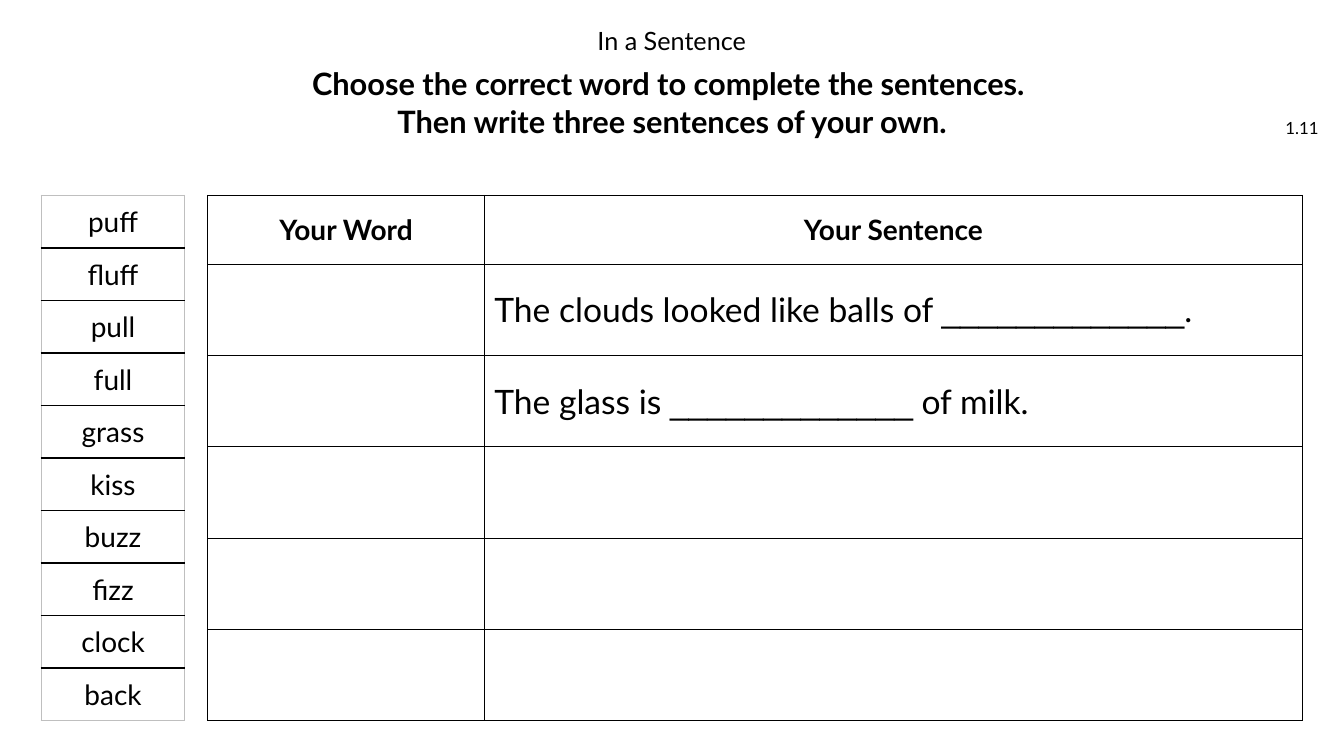
"""Build the "In a Sentence" word-choice worksheet slide."""
from lxml.etree import SubElement
from pptx import Presentation
from pptx.dml.color import RGBColor
from pptx.enum.text import MSO_ANCHOR, MSO_AUTO_SIZE, PP_ALIGN
from pptx.oxml.ns import qn
from pptx.util import Pt

COLORS = {"text": "000000", "rule": "000000", "edge": "BFBFBF", "cell": "FFFFFF"}
FONT, BLANK_FONT = "Lato", "Arial"
BLANK = "_____________"

TITLE = "In a Sentence"
INSTRUCTIONS = ["Choose the correct word to complete the sentences. ",
                "Then write three sentences of your own."]
LESSON = "1.11"
WORDS = ["puff", "fluff", "pull", "full", "grass",
         "kiss", "buzz", "fizz", "clock", "back"]
HEADINGS = ["Your Word", "Your Sentence"]
SENTENCES = [["The clouds looked like balls of ", BLANK, "."],
             ["The glass is ", BLANK, " of milk."],
             [], [], []]

TABLE_TOP, TABLE_HEIGHT = 139.6, 375.2
HEADING_HEIGHT = 49.2
WORD_LEFT, WORD_WIDTH = 29.5, 102.5
SENTENCE_LEFT, SENTENCE_WIDTHS = 148.4, [197.6, 584.4]


def add_run(p, text, size, bold=False):
    r = p.add_run()
    r.text = text
    r.font.name = BLANK_FONT if text == BLANK else FONT
    r.font.size = Pt(size)
    r.font.bold = bold
    r.font.color.rgb = RGBColor.from_string(COLORS["text"])


def place(sp, left, top, width, height, anchor):
    sp.left, sp.top, sp.width, sp.height = map(Pt, (left, top, width, height))
    tf = sp.text_frame
    tf.word_wrap = True
    tf.auto_size = MSO_AUTO_SIZE.NONE
    tf.vertical_anchor = anchor
    return tf


def format_cell(cell, edges):
    tcPr = cell._tc.get_or_add_tcPr()
    for side in ("lnL", "lnR", "lnT", "lnB"):
        ln = SubElement(tcPr, qn(f"a:{side}"), w=str(Pt(1)))
        fill = SubElement(ln, qn("a:solidFill"))
        color = COLORS["edge" if side in edges else "rule"]
        SubElement(fill, qn("a:srgbClr"), val=color)
    cell.fill.solid()
    cell.fill.fore_color.rgb = RGBColor.from_string(COLORS["cell"])
    cell.vertical_anchor = MSO_ANCHOR.MIDDLE


def add_grid(slide, left, widths, heights, grey_edges=False):
    table = slide.shapes.add_table(len(heights), len(widths), Pt(left), Pt(TABLE_TOP),
                                   Pt(sum(widths)), Pt(sum(heights))).table
    table.first_row = table.horz_banding = False
    for column, width in zip(table.columns, widths):
        column.width = Pt(width)
    for i, (row, height) in enumerate(zip(table.rows, heights)):
        row.height = Pt(height)
        edges = {"lnL", "lnR"} if grey_edges else set()
        if grey_edges and i == 0:
            edges.add("lnT")
        if grey_edges and i == len(heights) - 1:
            edges.add("lnB")
        for cell in row.cells:
            format_cell(cell, edges)
    return table


def fill_cell(cell, parts, size, align, bold=False):
    p = cell.text_frame.paragraphs[0]
    p.alignment = align
    for part in parts:
        add_run(p, part, size, bold)


def add_header(slide):
    tf = place(slide.shapes.title, 275, 16.6, 409.7, 25.2, MSO_ANCHOR.TOP)
    p = tf.paragraphs[0]
    p.alignment = PP_ALIGN.CENTER
    p.line_spacing = 0.9
    add_run(p, TITLE, 18)

    tf = place(slide.placeholders[1], 141.8, 43.2, 676.8, 59, MSO_ANCHOR.MIDDLE)
    for i, line in enumerate(INSTRUCTIONS):
        p = tf.add_paragraph() if i else tf.paragraphs[0]
        pPr = p._p.get_or_add_pPr()
        pPr.set("marL", "0")
        pPr.set("indent", "0")
        SubElement(pPr, qn("a:buNone"))
        p.alignment = PP_ALIGN.CENTER
        p.line_spacing = Pt(27)
        p.space_before = Pt(0)
        add_run(p, line, 22, True)

    box = slide.shapes.add_textbox(0, 0, 0, 0)
    tf = place(box, 903.6, 77, 45.4, 28.8, MSO_ANCHOR.MIDDLE)
    p = tf.paragraphs[0]
    p.alignment = PP_ALIGN.RIGHT
    add_run(p, LESSON, 12)


def main():
    prs = Presentation()
    prs.slide_width, prs.slide_height = Pt(960), Pt(540)
    slide = prs.slides.add_slide(prs.slide_layouts[1])
    add_header(slide)

    word_heights = [TABLE_HEIGHT / len(WORDS)] * len(WORDS)
    words = add_grid(slide, WORD_LEFT, [WORD_WIDTH], word_heights, grey_edges=True)
    for i, word in enumerate(WORDS):
        fill_cell(words.cell(i, 0), [word], 20, PP_ALIGN.CENTER)

    row_height = (TABLE_HEIGHT - HEADING_HEIGHT) / len(SENTENCES)
    heights = [HEADING_HEIGHT] + [row_height] * len(SENTENCES)
    sentences = add_grid(slide, SENTENCE_LEFT, SENTENCE_WIDTHS, heights)
    for i, heading in enumerate(HEADINGS):
        fill_cell(sentences.cell(0, i), [heading], 20, PP_ALIGN.CENTER, True)
    for i, parts in enumerate(SENTENCES, 1):
        fill_cell(sentences.cell(i, 1), parts, 24, PP_ALIGN.LEFT)

    prs.save("out.pptx")


if __name__ == "__main__":
    main()
